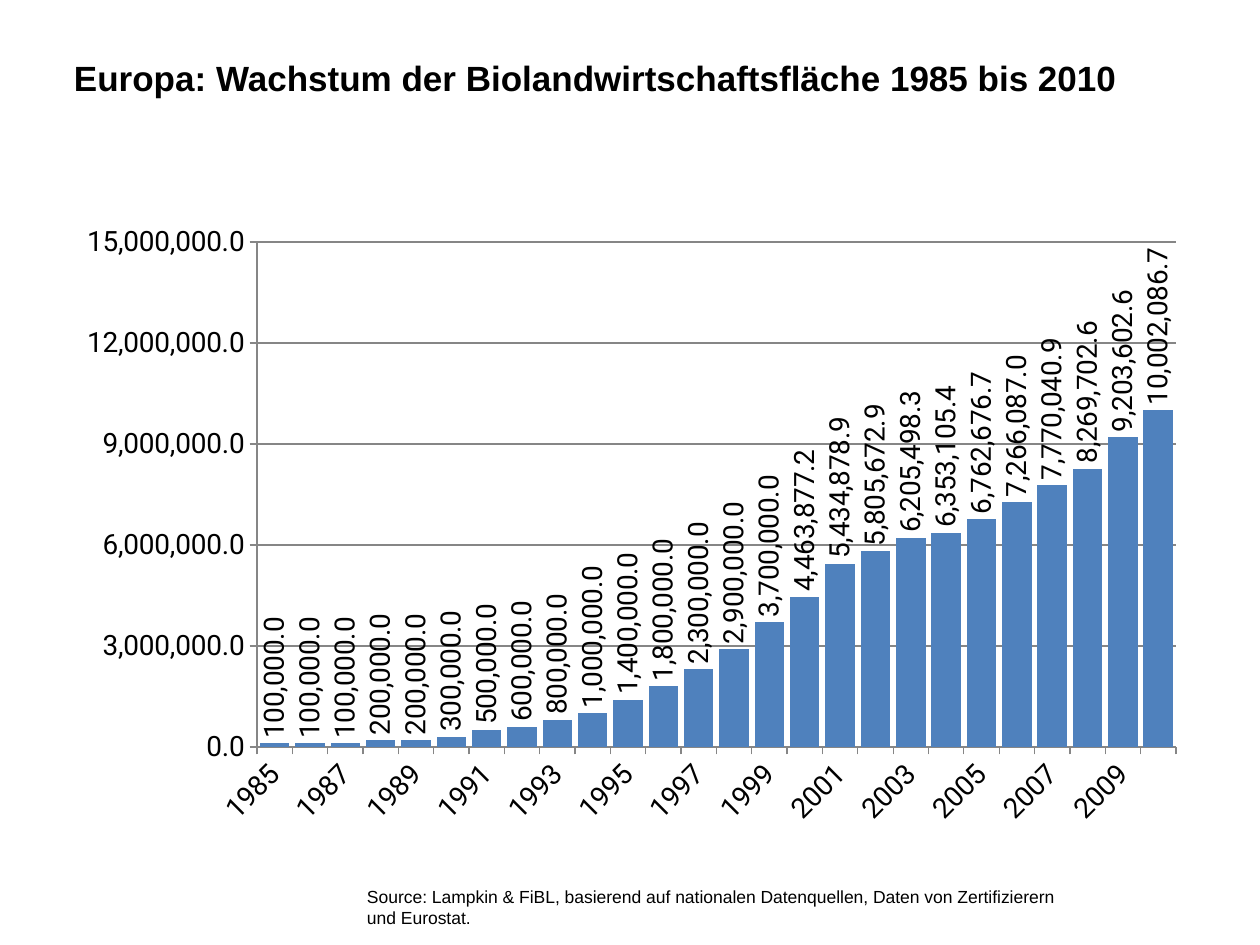
from lxml import etree
from pptx import Presentation
from pptx.chart.data import CategoryChartData
from pptx.dml.color import RGBColor
from pptx.enum.chart import XL_CHART_TYPE, XL_LABEL_POSITION, XL_TICK_MARK
from pptx.enum.text import MSO_ANCHOR
from pptx.oxml.ns import qn
from pptx.util import Pt

PX = 914400 / 126
BLACK = RGBColor(0x00, 0x00, 0x00)
BLUE = RGBColor(0x4F, 0x81, 0xBD)
GREY = RGBColor(0x86, 0x86, 0x86)
COLUMNS = XL_CHART_TYPE.COLUMN_CLUSTERED
OUTSIDE_END = XL_LABEL_POSITION.OUTSIDE_END
TICK_OUT, TICK_NONE = XL_TICK_MARK.OUTSIDE, XL_TICK_MARK.NONE
MIDDLE, TOP = MSO_ANCHOR.MIDDLE, MSO_ANCHOR.TOP

NUMBER_FORMAT = "#,##0.0"
YEARS = [str(year) for year in range(1985, 2011)]
HECTARES = [
    100000, 100000, 100000, 200000, 200000, 300000, 500000, 600000, 800000,
    1000000, 1400000, 1800000, 2300000, 2900000, 3700000, 4463877.2,
    5434878.9, 5805672.9, 6205498.3, 6353105.4, 6762676.7, 7266087,
    7770040.9, 8269702.6, 9203602.6, 10002086.7,
]


def px(n):
    return round(n * PX)


def set_font(font, name, size, bold=False):
    font.name, font.size, font.bold = name, Pt(size), bold
    font.color.rgb = BLACK


def add_text(slide, box, text, size, insets, anchor=TOP, bold=False):
    tf = slide.shapes.add_textbox(*map(px, box)).text_frame
    tf.word_wrap = True
    tf.vertical_anchor = anchor
    tf.margin_left, tf.margin_top, tf.margin_right, tf.margin_bottom = map(px, insets)
    p = tf.paragraphs[0]
    p.text = text
    set_font(p.font, "Arial", size, bold)


def rotate(element, degrees):
    body = element.find(qn("c:txPr")).find(qn("a:bodyPr"))
    body.set("rot", str(degrees * 60000))
    body.set("vert", "horz")


def place_plot(chart, box, plot_box):
    """Fix the inner plot area; plot_box is relative to the chart box."""
    area = chart.plots[0]._element.getparent()
    for old in area.findall(qn("c:layout")):
        area.remove(old)
    layout = etree.Element(qn("c:layout"))
    manual = etree.SubElement(layout, qn("c:manualLayout"))
    x, y, w, h = plot_box
    values = {
        "layoutTarget": "inner", "xMode": "edge", "yMode": "edge",
        "x": round(x / box[2], 4), "y": round(y / box[3], 4),
        "w": round(w / box[2], 4), "h": round(h / box[3], 4),
    }
    for tag, value in values.items():
        etree.SubElement(manual, qn("c:" + tag)).set("val", str(value))
    area.insert(0, layout)


def add_area_chart(slide, box):
    data = CategoryChartData(number_format=NUMBER_FORMAT)
    data.categories = YEARS
    data.add_series("Series 1", HECTARES)
    chart = slide.shapes.add_chart(COLUMNS, *map(px, box), data).chart
    chart.has_legend = chart.has_title = False
    set_font(chart.font, "Arial", 18)
    place_plot(chart, box, (193, 28, 919, 505))

    # Columns and their upright labels
    plot = chart.plots[0]
    plot.gap_width = 20
    plot.vary_by_categories = False
    series = plot.series[0]
    series.format.fill.solid()
    series.format.fill.fore_color.rgb = BLUE
    labels = series.data_labels
    labels.show_value = True
    labels.position = OUTSIDE_END
    labels.number_format = NUMBER_FORMAT
    labels.number_format_is_linked = False
    set_font(labels.font, "Roboto", 16)
    rotate(labels._element, -90)

    # Axes
    years, values = chart.category_axis, chart.value_axis
    for axis in (years, values):
        axis.major_tick_mark, axis.minor_tick_mark = TICK_OUT, TICK_NONE
        axis.format.line.color.rgb = GREY
        set_font(axis.tick_labels.font, "Roboto", 16)
    rotate(years._element, -45)
    skip = etree.Element(qn("c:tickLblSkip"))
    skip.set("val", "2")
    years._element.find(qn("c:noMultiLvlLbl")).addprevious(skip)
    values.minimum_scale, values.maximum_scale = 0, 15000000
    values.major_unit = 3000000
    values.tick_labels.number_format = NUMBER_FORMAT
    values.tick_labels.number_format_is_linked = False
    values.has_major_gridlines = True
    values.major_gridlines.format.line.color.rgb = GREY


def main():
    prs = Presentation()
    prs.slide_width, prs.slide_height = px(1260), px(945)
    slide = prs.slides.add_slide(prs.slide_layouts[6])

    # Title
    add_text(slide, (74, 32, 1136, 98),
             "Europa: Wachstum der Biolandwirtschaftsfläche 1985 bis 2010",
             20, (0, 0, 13, 6), MIDDLE, bold=True)
    # Growth chart
    add_area_chart(slide, (64, 214, 1134, 624))
    # Source note
    add_text(slide, (354, 880, 735, 55),
             "Source: Lampkin & FiBL, basierend auf nationalen Datenquellen, "
             "Daten von Zertifizierern und Eurostat.",
             10, (13, 6, 13, 6))

    prs.save("out.pptx")


if __name__ == "__main__":
    main()
